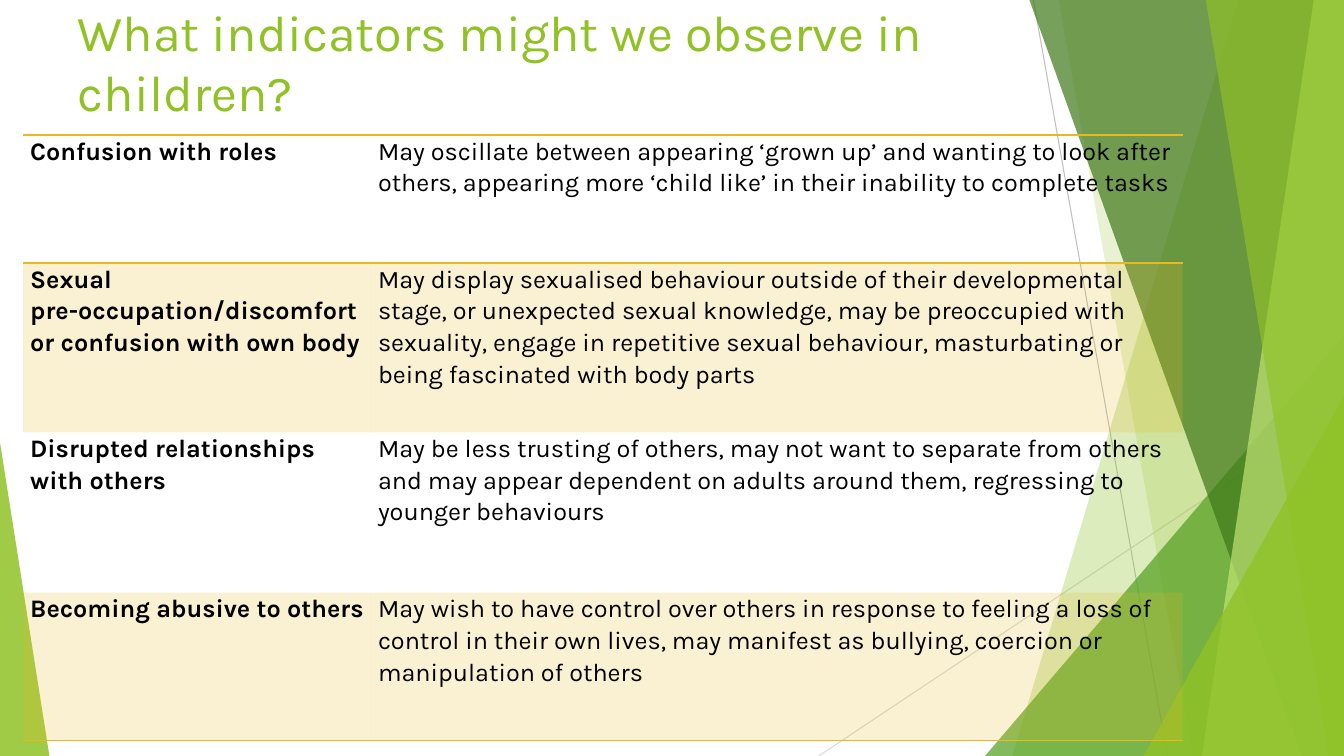
"""Build a slide listing the indicators that might be observed in children."""
import collections
import dataclasses

import pptx
import pptx.dml.color
import pptx.enum.shapes
import pptx.enum.text
import pptx.oxml.ns
import pptx.oxml.xmlchemy
import pptx.util
from lxml import etree

Inches = pptx.util.Inches
qn = pptx.oxml.ns.qn
Box = collections.namedtuple("Box", "left top width height")


@dataclasses.dataclass(frozen=True)
class Theme:
    """Colours and type sizes of the slide."""
    font: str = "Karla"
    green: str = "90C226"
    mid_green: str = "54A021"
    dark_green: str = "3F7819"
    pale_green: str = "C0E474"
    gold: str = "E6B91E"
    text: str = "000000"
    line: str = "BFBFBF"
    pale_line: str = "D9D9D9"
    title_size: int = 36
    body_size: int = 18


THEME = Theme()

INDICATORS = [
    ("Confusion with roles",
     "May oscillate between appearing ‘grown up’ and wanting to look after others, "
     "appearing more ‘child like’ in their inability to complete tasks"),
    ("Sexual pre-occupation/discomfort or confusion with own body",
     "May display sexualised behaviour outside of their developmental stage, or "
     "unexpected sexual knowledge, may be preoccupied with sexuality, engage in "
     "repetitive sexual behaviour, masturbating or being fascinated with body parts"),
    ("Disrupted relationships with others",
     "May be less trusting of others, may not want to separate from others and may "
     "appear dependent on adults around them, regressing to younger behaviours"),
    ("Becoming abusive to others",
     "May wish to have control over others in response to feeling a loss of control in "
     "their own lives, may manifest as bullying, coercion or manipulation of others"),
]
ROW_HEIGHTS = [1.27, 1.68, 1.59, 1.47]
COLUMN_SHARES = [0.3, 0.7]
RULED_EDGES = {0, 1, len(INDICATORS)}


def rgb(colour):
    """Return a colour object for a hex string."""
    return pptx.dml.color.RGBColor.from_string(colour)


def set_fill(fill, properties, colour, opacity):
    """Fill with a colour at the given opacity in percent."""
    fill.solid()
    fill.fore_color.rgb = rgb(colour)
    element = properties.find(qn("a:solidFill") + "/" + qn("a:srgbClr"))
    etree.SubElement(element, qn("a:alpha"), val=str(opacity * 1000))


def write_text(frame, text, size=THEME.body_size, colour=THEME.text, bold=False,
               spacing=1.0, after=0):
    """Write one left-aligned paragraph in the theme font."""
    frame.word_wrap = True
    paragraph = frame.paragraphs[0]
    paragraph.alignment = pptx.enum.text.PP_ALIGN.LEFT
    paragraph.line_spacing = spacing
    paragraph.space_after = pptx.util.Pt(after)
    run = paragraph.add_run()
    run.text = text
    run.font.name = THEME.font
    run.font.size = pptx.util.Pt(size)
    run.font.bold = bold
    run.font.color.rgb = rgb(colour)


def finish_shape(shape, colour, opacity):
    """Give a shape a translucent fill without outline or shadow."""
    shape.shadow.inherit = False
    set_fill(shape.fill, shape._element.spPr, colour, opacity)
    shape.line.fill.background()


def add_line(slide, start, end, colour):
    """Draw a thin straight line between two points."""
    connector = slide.shapes.add_connector(
        pptx.enum.shapes.MSO_CONNECTOR.STRAIGHT, *map(Inches, start + end))
    connector.line.color.rgb = rgb(colour)
    connector.line.width = pptx.util.Pt(0.75)
    etree.SubElement(connector._element.spPr, qn("a:effectLst"))


def add_facet(slide, box, top_inset, bottom_inset, colour, opacity):
    """Draw a full-height facet that ends at the right edge of the box."""
    right, bottom = box.left + box.width, box.top + box.height
    corners = [(right - top_inset, box.top), (right, box.top),
               (right, bottom), (right - bottom_inset, bottom)]
    points = [(Inches(x), Inches(y)) for x, y in corners]
    builder = slide.shapes.build_freeform(*points[0], scale=1.0)
    builder.add_line_segments(points[1:], close=True)
    finish_shape(builder.convert_to_shape(), colour, opacity)


def add_corner(slide, box, width, height, apex, colour, opacity):
    """Draw a triangle in the bottom left (apex 0) or right (apex 1) of the box."""
    left = box.left + apex * (box.width - width)
    top = box.top + box.height - height
    shape = slide.shapes.add_shape(
        pptx.enum.shapes.MSO_SHAPE.ISOSCELES_TRIANGLE,
        *map(Inches, (left, top, width, height)))
    shape.adjustments[0] = apex
    finish_shape(shape, colour, opacity)


def add_backdrop(slide, box):
    """Draw the green facets and thin lines around the box."""
    right, bottom = box.left + box.width, box.top + box.height
    add_line(slide, (right - 3.08, box.top), (right - 1.75, bottom), THEME.line)
    add_line(slide, (right, box.top + 4.03), (right - 5.21, bottom), THEME.pale_line)
    add_facet(slide, box, 1.05, 3.29, THEME.green, 30)
    add_facet(slide, box, 2.83, 1.5, THEME.green, 20)
    add_corner(slide, box, 3.56, 4.17, 1, THEME.mid_green, 72)
    add_facet(slide, box, 3.12, 0.42, THEME.dark_green, 70)
    add_facet(slide, box, 0.3, 1.41, THEME.pale_green, 70)
    add_facet(slide, box, 1.37, 0.15, THEME.green, 65)
    add_corner(slide, box, 1.99, 3.57, 1, THEME.green, 80)
    add_corner(slide, box, 0.49, 3.11, 0, THEME.green, 85)


def add_title(slide, box, text):
    """Place and format the title placeholder."""
    title = slide.shapes.title
    title.left, title.top, title.width, title.height = map(Inches, box)
    frame = title.text_frame
    frame.auto_size = pptx.enum.text.MSO_AUTO_SIZE.NONE
    frame.vertical_anchor = pptx.enum.text.MSO_ANCHOR.MIDDLE
    write_text(frame, text, size=THEME.title_size, colour=THEME.green)


def set_borders(properties, row):
    """Rule the chosen horizontal edges of a cell and clear the others."""
    ruled = {"a:lnL": False, "a:lnR": False,
             "a:lnT": row in RULED_EDGES, "a:lnB": row + 1 in RULED_EDGES}
    for tag, visible in ruled.items():
        line = etree.SubElement(properties, qn(tag), w=str(pptx.util.Pt(1)))
        if visible:
            fill = etree.SubElement(line, qn("a:solidFill"))
            etree.SubElement(fill, qn("a:srgbClr"), val=THEME.gold)
        else:
            etree.SubElement(line, qn("a:noFill"))


def format_cell(cell, row, text, bold):
    """Write one cell with its borders and band colour."""
    cell.margin_left = cell.margin_right = Inches(0.07)
    cell.margin_top = cell.margin_bottom = 0
    write_text(cell.text_frame, text, bold=bold, spacing=1.07, after=8)
    properties = cell._tc.get_or_add_tcPr()
    set_borders(properties, row)
    if row % 2:
        set_fill(cell.fill, properties, THEME.gold, 20)
    else:
        cell.fill.background()


def add_indicator_table(slide, box):
    """Place the table of indicators and their descriptions."""
    table = slide.shapes.add_table(
        len(INDICATORS), len(COLUMN_SHARES), *map(Inches, box)).table
    table.first_row = table.horz_banding = False
    for column, share in zip(table.columns, COLUMN_SHARES):
        column.width = Inches(box.width * share)
    for row, texts in enumerate(INDICATORS):
        table.rows[row].height = Inches(ROW_HEIGHTS[row])
        for column, text in enumerate(texts):
            format_cell(table.cell(row, column), row, text, bold=column == 0)


def main():
    """Build and save the presentation."""
    presentation = pptx.Presentation()
    presentation.slide_width, presentation.slide_height = Inches(13.33), Inches(7.5)
    slide = presentation.slides.add_slide(presentation.slide_layouts[5])
    add_backdrop(slide, Box(0, 0, 13.33, 7.5))
    add_title(slide, Box(0.67, -0.11, 9.4, 1.44),
              "What indicators might we observe in children?")
    add_indicator_table(slide, Box(0.23, 1.34, 11.5, sum(ROW_HEIGHTS)))
    presentation.save("out.pptx")


if __name__ == "__main__":
    main()
